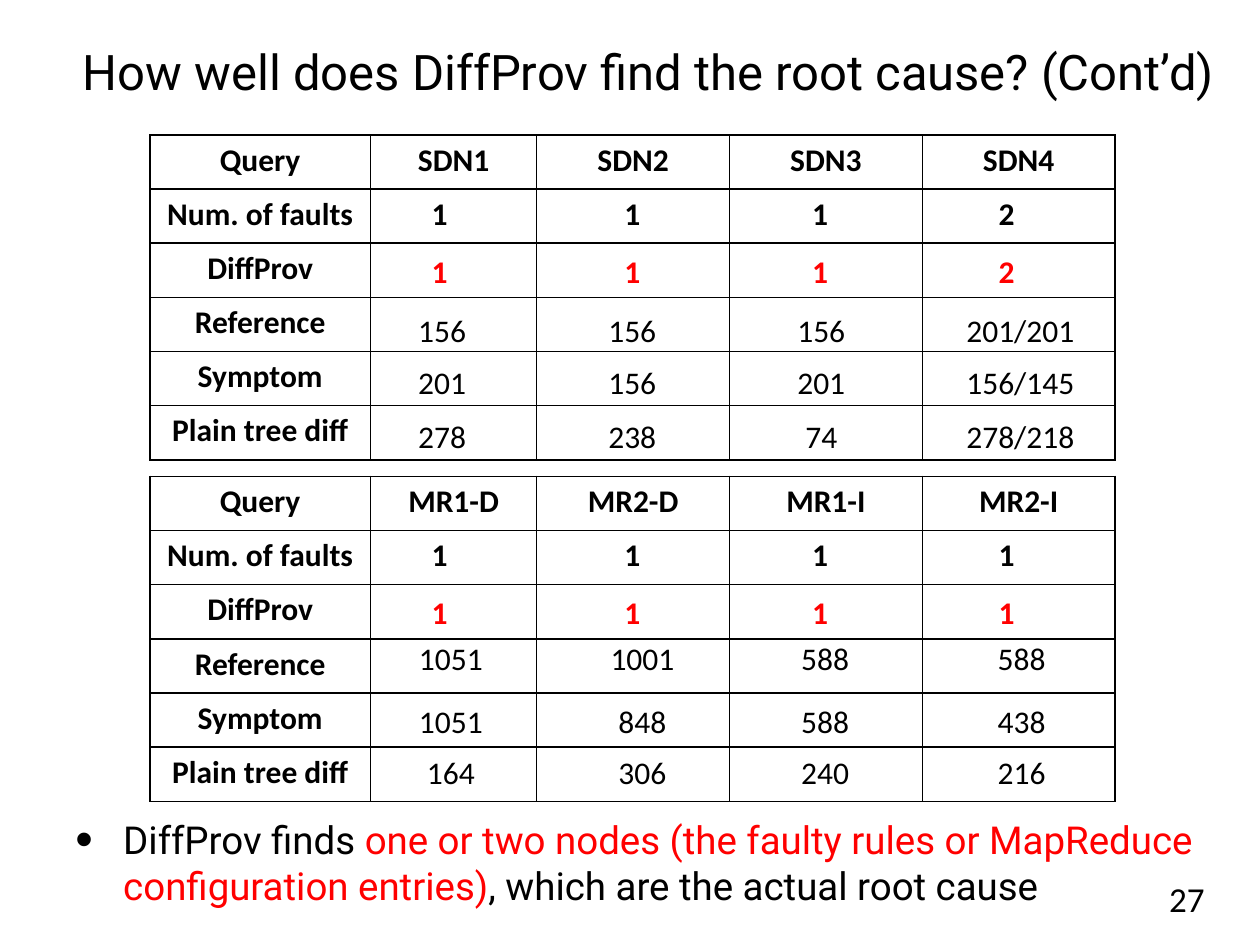
from lxml import etree
from pptx import Presentation
from pptx.dml.color import RGBColor
from pptx.enum.text import MSO_ANCHOR, PP_ALIGN
from pptx.oxml.ns import qn
from pptx.util import Inches, Pt

BLACK = RGBColor(0x00, 0x00, 0x00)
RED = RGBColor(0xFF, 0x00, 0x00)
CENTER, RIGHT = PP_ALIGN.CENTER, PP_ALIGN.RIGHT
TOP, MIDDLE = MSO_ANCHOR.TOP, MSO_ANCHOR.MIDDLE
TITLE_ONLY = 5

HEADING_FONT, DATA_FONT = "Roboto", "Calibri"
COLUMN_WIDTHS = [1.75, 1.32, 1.53, 1.53, 1.53]
ROW_HEIGHT = 0.43
MEASURES = ["Num. of faults", "DiffProv", "Reference", "Symptom", "Plain tree diff"]
FAULT_STOPS = [0.45, 1.98, 3.47, 4.95]

RESULTS = [
    {
        "top": 1.07,
        "queries": ["SDN1", "SDN2", "SDN3", "SDN4"],
        "faults": ["1", "1", "1", "2"],
        "left": 2.94,
        "stops": [0.47, 1.98, 3.48, 5.06],
        "sizes": [
            (2.42, ["156", "156", "156", "201/201"]),
            (2.83, ["201", "156", "201", "156/145"]),
            (3.26, ["278", "238", "74", "278/218"]),
        ],
    },
    {
        "top": 3.78,
        "queries": ["MR1-D", "MR2-D", "MR1-I", "MR2-I"],
        "faults": ["1", "1", "1", "1"],
        "left": 3,
        "stops": [0.48, 2, 3.45, 5.01],
        "sizes": [
            (5.02, ["1051", "1001", "588", "588"]),
            (5.52, ["1051", "848", "588", "438"]),
            (5.93, ["164", "306", "240", "216"]),
        ],
    },
]


class SlideBuilder:
    def __init__(self, slide):
        self.slide = slide

    def add_text(self, paragraph, text, font, size, color=BLACK, bold=False):
        run = paragraph.add_run()
        run.text = text
        style = {"name": font, "size": Pt(size), "bold": bold}
        for attribute, value in style.items():
            setattr(run.font, attribute, value)
        run.font.color.rgb = color

    def title(self, text, left, top, width, height):
        heading = self.slide.shapes.title
        place = {"left": left, "top": top, "width": width, "height": height}
        for attribute, value in place.items():
            setattr(heading, attribute, Inches(value))
        frame = heading.text_frame
        frame.vertical_anchor = TOP
        frame.margin_top = Inches(0.08)
        frame.paragraphs[0].alignment = CENTER
        self.add_text(frame.paragraphs[0], text, HEADING_FONT, 28)

    def text_box(self, left, top, width, height, anchor=TOP):
        box = self.slide.shapes.add_textbox(
            Inches(left), Inches(top), Inches(width), Inches(height)
        )
        box.text_frame.word_wrap = True
        box.text_frame.vertical_anchor = anchor
        return box.text_frame.paragraphs[0]

    def page_number(self, text, left, top, width, height):
        number = self.text_box(left, top, width, height, MIDDLE)
        number.alignment = RIGHT
        self.add_text(number, text, DATA_FONT, 20)

    def bullet(self, parts, left, top, width, height):
        finding = self.text_box(left, top, width, height)
        properties = finding._p.get_or_add_pPr()
        properties.set("marL", str(Inches(0.38)))
        properties.set("indent", str(-Inches(0.38)))
        etree.SubElement(properties, qn("a:buSzPct"), val="130000")
        etree.SubElement(properties, qn("a:buFont"), typeface="Arial")
        etree.SubElement(properties, qn("a:buChar"), char="•")
        for text, color in parts:
            self.add_text(finding, text, HEADING_FONT, 22, color)

    def value_row(self, values, left, top, stops, color=BLACK, bold=False):
        row = self.text_box(left, top, 5.92, 0.4)
        tabs = etree.SubElement(row._p.get_or_add_pPr(), qn("a:tabLst"))
        for stop in stops:
            etree.SubElement(tabs, qn("a:tab"), pos=str(Inches(stop)), algn="ctr")
        text = "".join(f"\t{value}" for value in values)
        self.add_text(row, text, DATA_FONT, 18, color, bold)

    def border(self, cell):
        properties = cell._tc.get_or_add_tcPr()
        for position, side in enumerate(["a:lnL", "a:lnR", "a:lnT", "a:lnB"]):
            line = etree.Element(qn(side), w=str(Pt(1)))
            fill = etree.SubElement(line, qn("a:solidFill"))
            etree.SubElement(fill, qn("a:srgbClr"), val=str(BLACK))
            properties.insert(position, line)

    def grid(self, queries, left, top):
        rows = len(MEASURES) + 1
        table = self.slide.shapes.add_table(
            rows, len(COLUMN_WIDTHS), Inches(left), Inches(top),
            Inches(sum(COLUMN_WIDTHS)), Inches(rows * ROW_HEIGHT),
        ).table
        for flag, value in {"first_row": False, "horz_banding": False}.items():
            setattr(table, flag, value)
        for column, width in zip(table.columns, COLUMN_WIDTHS):
            column.width = Inches(width)
        for row in table.rows:
            row.height = Inches(ROW_HEIGHT)
        for cell in table.iter_cells():
            cell.fill.background()
            self.border(cell)
        labels = {(0, column): query for column, query in enumerate(["Query"] + queries)}
        labels.update({(row, 0): name for row, name in enumerate(MEASURES, 1)})
        for (row, column), text in labels.items():
            label = table.cell(row, column).text_frame.paragraphs[0]
            label.alignment = CENTER
            self.add_text(label, text, DATA_FONT, 18, bold=True)


def main():
    presentation = Presentation()
    presentation.slide_width = Inches(10)
    presentation.slide_height = Inches(7.5)
    layout = presentation.slide_layouts[TITLE_ONLY]
    builder = SlideBuilder(presentation.slides.add_slide(layout))

    builder.title("How well does DiffProv find the root cause? (Cont’d)", 0.51, 0.25, 9.27, 1.08)
    builder.page_number("27", 7.33, 6.93, 2.33, 0.4)
    builder.bullet(
        [
            ("DiffProv finds ", BLACK),
            ("one or two nodes (the faulty rules or MapReduce configuration entries)", RED),
            (", which are the actual root cause", BLACK),
        ],
        0.5, 6.43, 9.33, 0.67,
    )
    for result in RESULTS:
        top = result["top"]
        builder.grid(result["queries"], 1.19, top)
        for offset, color in [(0.42, BLACK), (0.88, RED)]:
            builder.value_row(result["faults"], 2.94, top + offset, FAULT_STOPS, color, True)
        for row_top, values in result["sizes"]:
            builder.value_row(values, result["left"], row_top, result["stops"])

    presentation.save("out.pptx")


if __name__ == "__main__":
    main()
